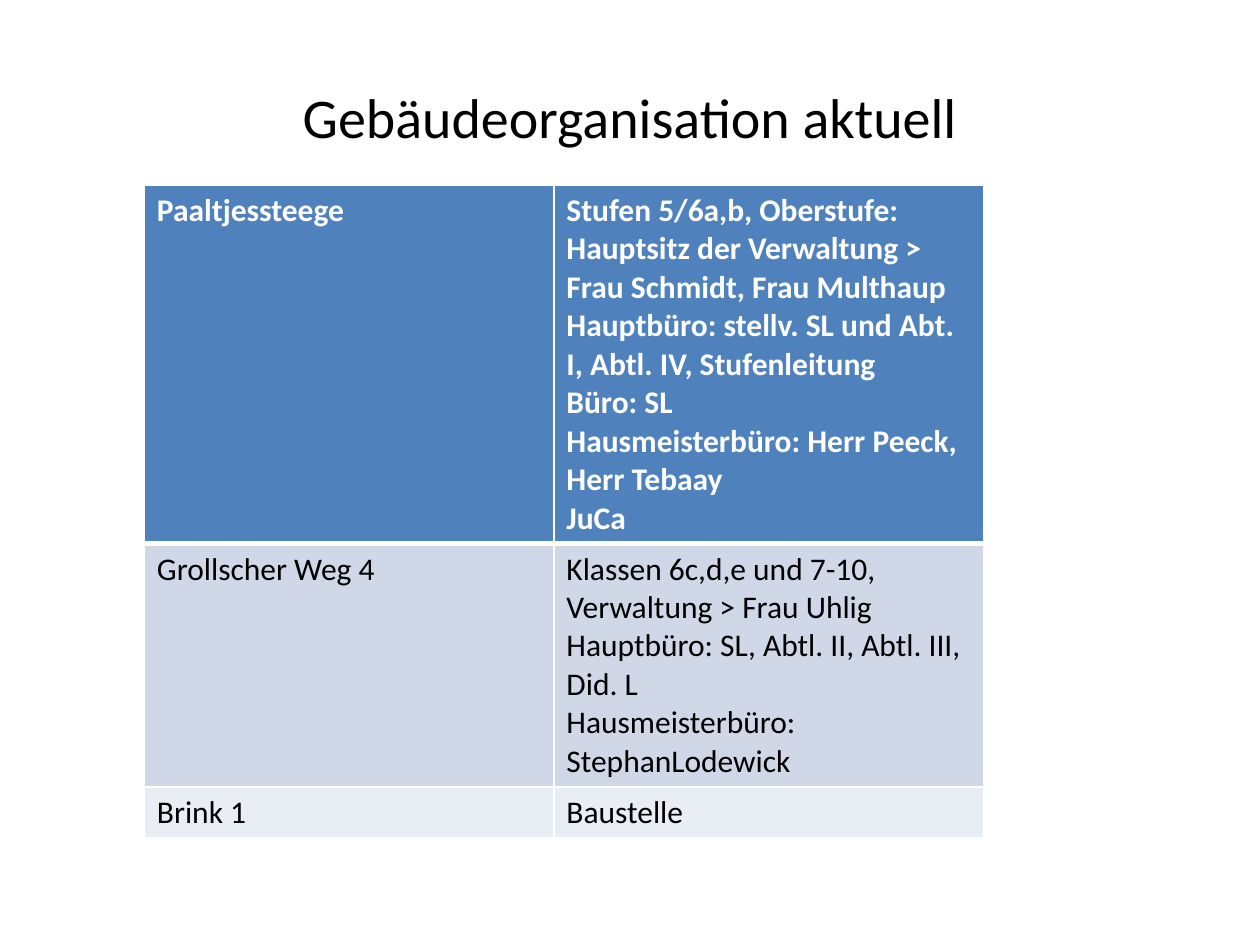
from lxml.etree import SubElement
from pptx import Presentation
from pptx.dml.color import RGBColor
from pptx.enum.text import MSO_ANCHOR, PP_ALIGN
from pptx.oxml.ns import qn
from pptx.util import Pt

FONT = "Calibri"
BLACK = RGBColor(0x00, 0x00, 0x00)
WHITE = RGBColor(0xFF, 0xFF, 0xFF)
HEADER_BLUE = RGBColor(0x4F, 0x81, 0xBD)
BAND_DARK = RGBColor(0xD0, 0xD8, 0xE8)
BAND_LIGHT = RGBColor(0xE9, 0xED, 0xF4)

COLUMN_WIDTHS = (234, 245.5)

# Building, its uses, row height, fill
BUILDINGS = [
    ("Paaltjessteege",
     ["Stufen 5/6a,b, Oberstufe: Hauptsitz der Verwaltung > "
      "Frau Schmidt, Frau Multhaup",
      "Hauptbüro: stellv. SL und Abt. I, Abtl. IV, Stufenleitung",
      "Büro: SL",
      "Hausmeisterbüro: Herr Peeck, Herr Tebaay",
      "JuCa"],
     204.9, HEADER_BLUE),
    ("Grollscher Weg 4",
     ["Klassen 6c,d,e und 7-10, Verwaltung > Frau Uhlig",
      "Hauptbüro: SL, Abtl. II, Abtl. III, Did. L",
      "Hausmeisterbüro: StephanLodewick"],
     139, BAND_DARK),
    ("Brink 1", ["Baustelle"], 29.2, BAND_LIGHT),
]


def write_text(frame, lines, size=18, color=BLACK, bold=False,
               align=PP_ALIGN.LEFT, anchor=MSO_ANCHOR.TOP):
    frame.word_wrap = True
    frame.vertical_anchor = anchor
    for index, line in enumerate(lines):
        paragraph = frame.paragraphs[0] if index == 0 else frame.add_paragraph()
        paragraph.alignment = align
        run = paragraph.add_run()
        run.text = line
        run.font.name = FONT
        run.font.size = Pt(size)
        run.font.bold = bold
        run.font.color.rgb = color


def add_borders(cell, **widths):
    """Draw white cell borders; widths are in points, keyed by side."""
    properties = cell._tc.get_or_add_tcPr()
    for position, side in enumerate("LRTB"):
        line = SubElement(properties, qn(f"a:ln{side}"), w=str(Pt(widths.get(side, 1))))
        solid = SubElement(line, qn("a:solidFill"))
        SubElement(solid, qn("a:srgbClr"), val=str(WHITE))
        properties.insert(position, line)


def place_title(slide, left, top, width, height):
    title = slide.shapes.title
    title.left, title.top = Pt(left), Pt(top)
    title.width, title.height = Pt(width), Pt(height)
    write_text(title.text_frame, ["Gebäudeorganisation aktuell"], size=32,
               align=PP_ALIGN.CENTER, anchor=MSO_ANCHOR.MIDDLE)


def place_buildings(slide, left, top):
    height = sum(building[2] for building in BUILDINGS)
    table = slide.shapes.add_table(
        len(BUILDINGS), len(COLUMN_WIDTHS), Pt(left), Pt(top),
        Pt(sum(COLUMN_WIDTHS)), Pt(height)).table
    for column, width in zip(table.columns, COLUMN_WIDTHS):
        column.width = Pt(width)

    for row, (building, uses, row_height, fill) in enumerate(BUILDINGS):
        table.rows[row].height = Pt(row_height)
        is_header = row == 0
        for column, lines in enumerate(([building], uses)):
            cell = table.cell(row, column)
            cell.fill.solid()
            cell.fill.fore_color.rgb = fill
            add_borders(cell, T=3 if row == 1 else 1, B=3 if is_header else 1)
            write_text(cell.text_frame, lines, bold=is_header,
                       color=WHITE if is_header else BLACK)


def main():
    presentation = Presentation()
    presentation.slide_width, presentation.slide_height = Pt(720), Pt(540)
    slide = presentation.slides.add_slide(presentation.slide_layouts[5])
    place_title(slide, 36, 21.6, 648, 90)
    place_buildings(slide, 82.5, 105.8)
    presentation.save("out.pptx")


if __name__ == "__main__":
    main()
